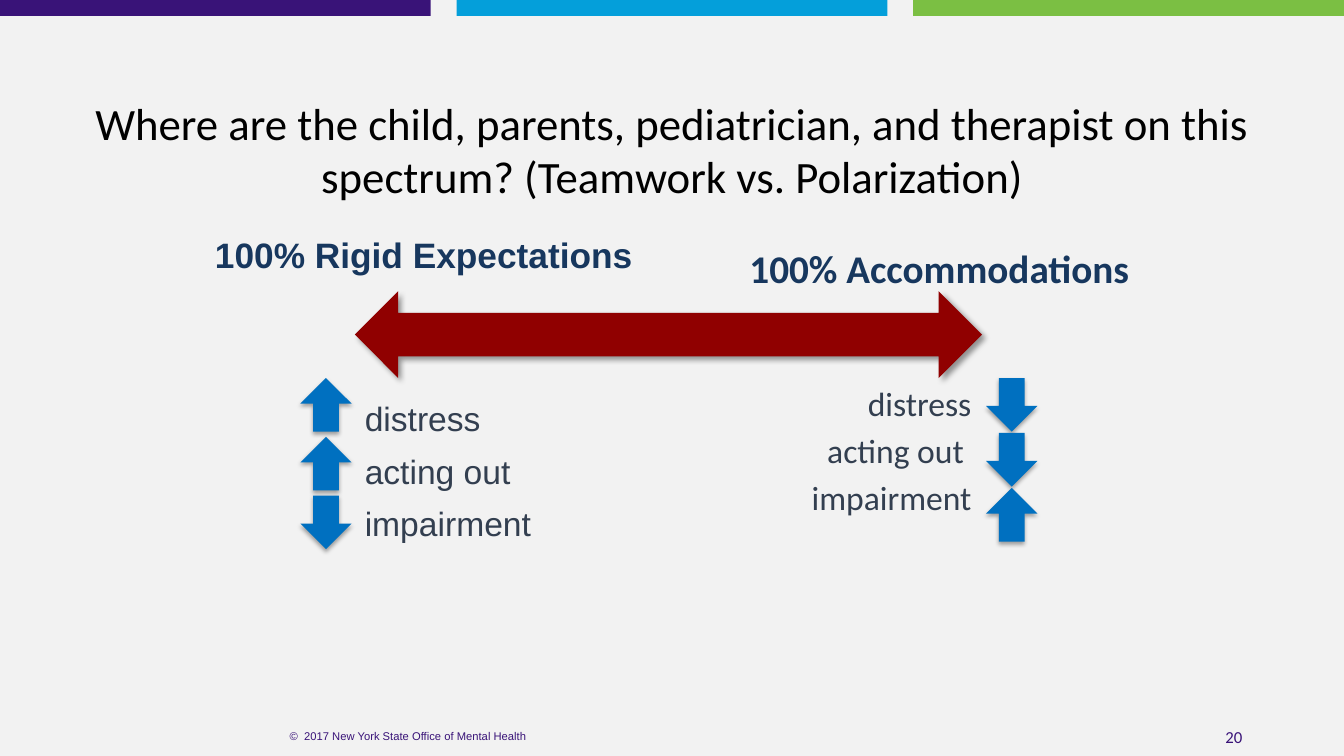
from lxml import etree
from pptx import Presentation
from pptx.dml.color import RGBColor
from pptx.enum.shapes import MSO_SHAPE
from pptx.enum.text import MSO_ANCHOR, PP_ALIGN
from pptx.oxml.ns import qn
from pptx.util import Pt

LEFT, CENTER, RIGHT = PP_ALIGN.LEFT, PP_ALIGN.CENTER, PP_ALIGN.RIGHT
TOP, MIDDLE = MSO_ANCHOR.TOP, MSO_ANCHOR.MIDDLE
RECTANGLE = MSO_SHAPE.RECTANGLE
UP_ARROW = MSO_SHAPE.UP_ARROW
DOUBLE_ARROW = MSO_SHAPE.LEFT_RIGHT_ARROW

COLORS = {
    "background": "F2F2F2",
    "purple": "391378",
    "blue": "049FDA",
    "green": "7BBF43",
    "title": "000000",
    "heading": "17375E",
    "symptom": "333F50",
    "spectrum": "900000",
    "trend": "0070C0",
    "shadow": "000000",
}
SYMPTOMS = ["distress", "acting out", "impairment"]


def color(name):
    return RGBColor.from_string(COLORS[name])


def add_text(page, box, lines, font="Calibri", size=24, fill="title", bold=False,
             align=LEFT, anchor=TOP, spacing=None, before=0):
    frame = page.shapes.add_textbox(*map(Pt, box)).text_frame
    frame.word_wrap = True
    frame.vertical_anchor = anchor
    for index, line in enumerate(lines):
        para = frame.add_paragraph() if index else frame.paragraphs[0]
        para.alignment = align
        if spacing:
            para.line_spacing = spacing
        if index:
            para.space_before = Pt(before)
        span = para.add_run()
        span.text = line
        span.font.name = font
        span.font.size = Pt(size)
        span.font.bold = bold
        span.font.color.rgb = color(fill)


def add_shape(page, kind, box, fill):
    shape = page.shapes.add_shape(kind, *map(Pt, box))
    shape.shadow.inherit = False
    shape.fill.solid()
    shape.fill.fore_color.rgb = color(fill)
    shape.line.fill.background()
    return shape


def add_shadow(shape, opacity, blur, distance, angle):
    effects = shape.element.spPr.find(qn("a:effectLst"))
    shadow = etree.SubElement(
        effects, qn("a:outerShdw"), blurRad=str(Pt(blur)), dist=str(Pt(distance)),
        dir=str(angle * 60000), rotWithShape="0")
    tint = etree.SubElement(shadow, qn("a:srgbClr"), val=COLORS["shadow"])
    etree.SubElement(tint, qn("a:alpha"), val=str(opacity * 1000))


def add_top_bars(page, box):
    left, top, width, height = box
    gap = 18.4
    bar = (width - 2 * gap) / 3
    for index, fill in enumerate(["purple", "blue", "green"]):
        add_shape(page, RECTANGLE, (left + index * (bar + gap), top, bar, height), fill)


def add_footer(page, box):
    left, top, width, height = box
    add_text(page, (left + width - 216, top, 216, height), ["20"], size=12,
             fill="purple", align=RIGHT, anchor=MIDDLE)
    add_text(page, (left, top, 322, height),
             ["©  2017 New York State Office of Mental Health"], font="Arial",
             size=8, fill="purple", align=CENTER, anchor=MIDDLE)


def add_spectrum(page, box):
    left, top, width, height = box
    add_text(page, (left - 107, top - 45, 338, 37), ["100% Rigid Expectations"],
             font="Arial", size=25.2, fill="heading", bold=True, anchor=MIDDLE)
    add_text(page, (left + 244, top - 37, 316, 40), ["100% Accommodations"],
             size=28, fill="heading", bold=True, align=RIGHT, anchor=MIDDLE)
    add_shadow(add_shape(page, DOUBLE_ARROW, box, "spectrum"), 40, 4, 3, 45)


def add_trends(page, box, pitch, rotations):
    left, top, width, height = box
    for index, rotation in enumerate(rotations):
        arrow = add_shape(page, UP_ARROW, (left, top + index * pitch, width, height), "trend")
        arrow.rotation = rotation
        add_shadow(arrow, 35, 3.1, 1.8, 90)


def add_rigid_side(page, box):
    left, top, width, height = box
    add_text(page, (left + 39, top + 13, width - 39, height - 13), SYMPTOMS,
             font="Arial", fill="symptom", spacing=0.95, before=10)
    add_trends(page, (left, top, 36.7, 38.3), 42, (0, 0, 180))


def add_accommodating_side(page, box):
    left, top, width, height = box
    distress, acting_out, impairment = SYMPTOMS
    add_text(page, (left, top, width - 40, height),
             [distress, acting_out + " ", impairment],
             fill="symptom", align=RIGHT, before=4.8)
    add_trends(page, (left + width - 36.7, top, 36.7, 38.3), 39.25, (180, 180, 0))


def main():
    deck = Presentation()
    deck.slide_width, deck.slide_height = Pt(960), Pt(540)
    page = deck.slides.add_slide(deck.slide_layouts[6])
    page.background.fill.solid()
    page.background.fill.fore_color.rgb = color("background")
    add_top_bars(page, (0, 0, 960, 11.4))
    add_footer(page, (130.5, 511.5, 764, 29))
    add_spectrum(page, (253.5, 208, 448, 62))
    add_rigid_side(page, (214.5, 270, 263, 143))
    add_accommodating_side(page, (477, 270, 264, 143))
    add_text(page, (52.5, 64.5, 855.5, 85),
             ["Where are the child, parents, pediatrician, and therapist on this "
              "spectrum? (Teamwork vs. Polarization)"], size=32, align=CENTER)
    deck.save("out.pptx")


if __name__ == "__main__":
    main()
